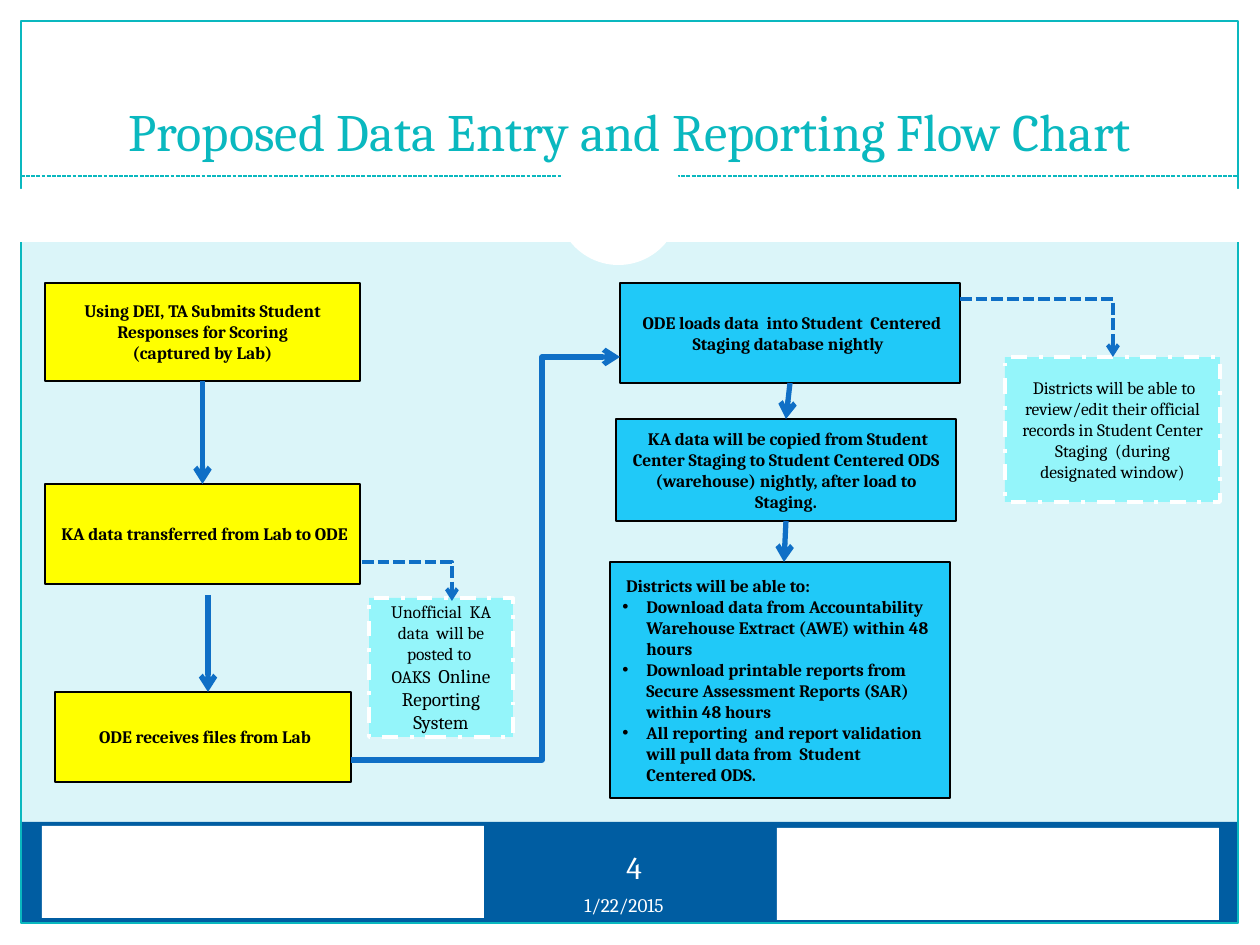
from dataclasses import dataclass
from typing import NamedTuple

from lxml.etree import SubElement
from pptx import Presentation
from pptx.dml.color import RGBColor
from pptx.enum.dml import MSO_LINE as Dash
from pptx.enum.shapes import MSO_CONNECTOR as Connector, MSO_SHAPE as Preset
from pptx.enum.text import MSO_ANCHOR as Anchor, PP_ALIGN as Align
from pptx.oxml.ns import qn
from pptx.util import Emu, Pt

PIXELS_PER_INCH = 126
FONT = "Cambria"
WHITE, BLACK, YELLOW = "FFFFFF", "000000", "FFFF00"
SKY, AQUA, TEAL = "20C9F8", "94F5FA", "0AB8BF"
ARROW, FOOTER, BACKGROUND = "0F6FC6", "005DA2", "DBF5F9"
BOTTOM, TOP = 2, 0


class Area(NamedTuple):
    left: int
    top: int
    width: int
    height: int


class Run(NamedTuple):
    text: str
    size: int = 10


@dataclass
class Step:
    name: str
    area: Area
    fill: str
    paragraphs: list[list[Run]]
    optional: bool = False
    bulleted: bool = False


@dataclass
class Arrow:
    start: tuple[int, int]
    end: tuple[int, int]
    source: str = ""
    target: str = ""
    preset: str = "line"
    width: float = 3
    dashed: bool = False
    bend: int = 0


PANELS = [
    (Area(20, 822, 1218, 102), FOOTER),
    (Area(0, 924, 1260, 21), WHITE),
    (Area(0, 0, 1260, 192), WHITE),
    (Area(0, 0, 21, 945), WHITE),
    (Area(1239, 0, 21, 945), WHITE),
]
COVERS = [
    (Preset.OVAL, Area(559, 136, 123, 123)),
    (Preset.RECTANGLE, Area(777, 828, 442, 92)),
    (Preset.RECTANGLE, Area(42, 826, 442, 92)),
    (Preset.RECTANGLE, Area(0, 189, 1260, 53)),
    (Preset.OVAL, Area(557, 142, 123, 123)),
]
STEPS = [
    Step("submit", Area(45, 283, 315, 98), YELLOW,
         [[Run(" Using DEI, TA Submits Student  Responses for Scoring\n(captured by Lab)")]]),
    Step("transfer", Area(45, 484, 315, 100), YELLOW, [[Run(" KA data transferred from Lab to ODE")]]),
    Step("receive", Area(55, 692, 296, 90), YELLOW, [[Run(" ODE receives files from Lab")]]),
    Step("load", Area(620, 283, 340, 100), SKY,
         [[Run(" ODE loads data  into Student  Centered Staging database nightly ")]]),
    Step("copy", Area(616, 419, 340, 102), SKY,
         [[Run(" KA data will be copied from Student Center Staging to Student Centered ODS "
               "(warehouse) nightly, after load to Staging.")]]),
    Step("review", Area(1005, 357, 215, 145), AQUA,
         [[Run(" ", 8), Run("Districts will be able to review/edit their official records in "
                             "Student Center Staging  (during designated window)")]], optional=True),
    Step("unofficial", Area(369, 598, 144, 139), AQUA,
         [[Run("Unofficial  KA data  will be posted to \nOAKS  "),
           Run("Online Reporting System", 11)]], optional=True),
    Step("access", Area(610, 562, 340, 236), SKY, [
        [Run(" Districts will be able to:")],
        [Run("Download data from Accountability  Warehouse Extract (AWE) within 48 hours")],
        [Run("Download printable reports from Secure Assessment Reports (SAR) within 48 hours")],
        [Run("All reporting  and report validation will pull data from  Student  Centered ODS. ")],
    ], bulleted=True),
]
ARROWS = [
    Arrow((202, 381), (202, 484), "submit", "transfer"),
    Arrow((208, 595), (208, 692)),
    Arrow((362, 562), (452, 601), preset="bentConnector2", width=2.25, dashed=True),
    Arrow((351, 760), (620, 357), preset="bentConnector3", bend=71000),
    Arrow((788, 383), (786, 419), "load", "copy"),
    Arrow((786, 521), (784, 562), "copy"),
    Arrow((960, 299), (1113, 357), preset="bentConnector2", width=2.25, dashed=True),
]


def px(value: int) -> Emu:
    return Emu(round(value * 914400 / PIXELS_PER_INCH))


def color(value: str) -> RGBColor:
    return RGBColor.from_string(value)


def add_panel(slide, area: Area, fill=None, line=None, width=0.75, dash=None, preset=Preset.RECTANGLE):
    shape = slide.shapes.add_shape(preset, *map(px, area))
    shape.shadow.inherit = False
    if fill:
        shape.fill.solid()
        shape.fill.fore_color.rgb = color(fill)
    else:
        shape.fill.background()
    if line:
        shape.line.color.rgb = color(line)
        shape.line.width = Pt(width)
        shape.line.dash_style = dash
    else:
        shape.line.fill.background()
    return shape


def add_bullet(paragraph) -> None:
    properties = paragraph._p.get_or_add_pPr()
    properties.set("marL", str(px(24)))
    properties.set("indent", str(-px(24)))
    SubElement(properties, qn("a:buFont"), typeface="Arial")
    SubElement(properties, qn("a:buChar"), char="•")


def write(shape, paragraphs: list[list[Run]], *, fill=BLACK, bold=False,
          align=Align.CENTER, anchor=Anchor.MIDDLE, bulleted=False) -> None:
    frame = shape.text_frame
    frame.word_wrap = True
    frame.vertical_anchor = anchor
    for index, runs in enumerate(paragraphs):
        paragraph = frame.add_paragraph() if index else frame.paragraphs[0]
        paragraph.alignment = align
        if bulleted and index:
            add_bullet(paragraph)
        for text, size in runs:
            for number, piece in enumerate(text.split("\n")):
                if number:
                    paragraph.add_line_break()
                    SubElement(paragraph._p[-1], qn("a:rPr"), sz=str(size * 100))
                run = paragraph.add_run()
                run.text = piece
                run.font.name = FONT
                run.font.size = Pt(size)
                run.font.bold = bold
                run.font.color.rgb = color(fill)


def add_label(slide, area: Area, text: str, size: int, **style) -> None:
    write(slide.shapes.add_textbox(*map(px, area)), [[Run(text, size)]], **style)


def add_step(slide, step: Step):
    if step.optional:
        shape = add_panel(slide, step.area, step.fill, WHITE, 2.25, Dash.DASH_DOT)
    else:
        shape = add_panel(slide, step.area, step.fill, BLACK, 1.5)
    write(shape, step.paragraphs, bold=not step.optional, bulleted=step.bulleted,
          align=Align.LEFT if step.bulleted else Align.CENTER)
    return shape


def add_line(slide, start, end, line: str, width: float, dashed=False, kind=Connector.STRAIGHT):
    connector = slide.shapes.add_connector(kind, *map(px, (*start, *end)))
    connector.line.color.rgb = color(line)
    connector.line.width = Pt(width)
    if dashed:
        connector.line.dash_style = Dash.SQUARE_DOT
    SubElement(connector._element.spPr, qn("a:effectLst"))
    return connector


def add_arrow(slide, arrow: Arrow, boxes: dict) -> None:
    kind = Connector.STRAIGHT if arrow.preset == "line" else Connector.ELBOW
    connector = add_line(slide, arrow.start, arrow.end, ARROW, arrow.width, arrow.dashed, kind)
    SubElement(connector.line._get_or_add_ln(), qn("a:tailEnd"), type="arrow")
    geometry = connector._element.spPr.find(qn("a:prstGeom"))
    geometry.set("prst", arrow.preset)
    if arrow.bend:
        guides = geometry.find(qn("a:avLst"))
        SubElement(guides, qn("a:gd"), name="adj1", fmla=f"val {arrow.bend}")
    if arrow.source:
        connector.begin_connect(boxes[arrow.source], BOTTOM)
    if arrow.target:
        connector.end_connect(boxes[arrow.target], TOP)


def main() -> None:
    presentation = Presentation()
    presentation.slide_width, presentation.slide_height = px(1260), px(945)
    slide = presentation.slides.add_slide(presentation.slide_layouts[6])
    slide.background.fill.solid()
    slide.background.fill.fore_color.rgb = color(BACKGROUND)
    for area, fill in PANELS:
        add_panel(slide, area, fill)
    add_panel(slide, Area(21, 21, 1217, 902), line=TEAL)
    add_line(slide, (21, 176), (1239, 176), TEAL, 0.75, dashed=True)
    for preset, area in COVERS:
        add_panel(slide, area, WHITE, preset=preset)
    add_label(slide, Area(572, 887, 126, 37), "1/22/2015", 11, fill=WHITE, align=Align.LEFT, anchor=Anchor.TOP)
    add_label(slide, Area(592, 842, 84, 50), "4", 18, fill=WHITE, anchor=Anchor.TOP)
    add_label(slide, Area(42, 32, 1176, 136), "Proposed Data Entry and Reporting Flow Chart", 30,
              fill=TEAL, anchor=Anchor.BOTTOM)
    boxes = {step.name: add_step(slide, step) for step in STEPS}
    for arrow in ARROWS:
        add_arrow(slide, arrow, boxes)
    presentation.save("out.pptx")


if __name__ == "__main__":
    main()
